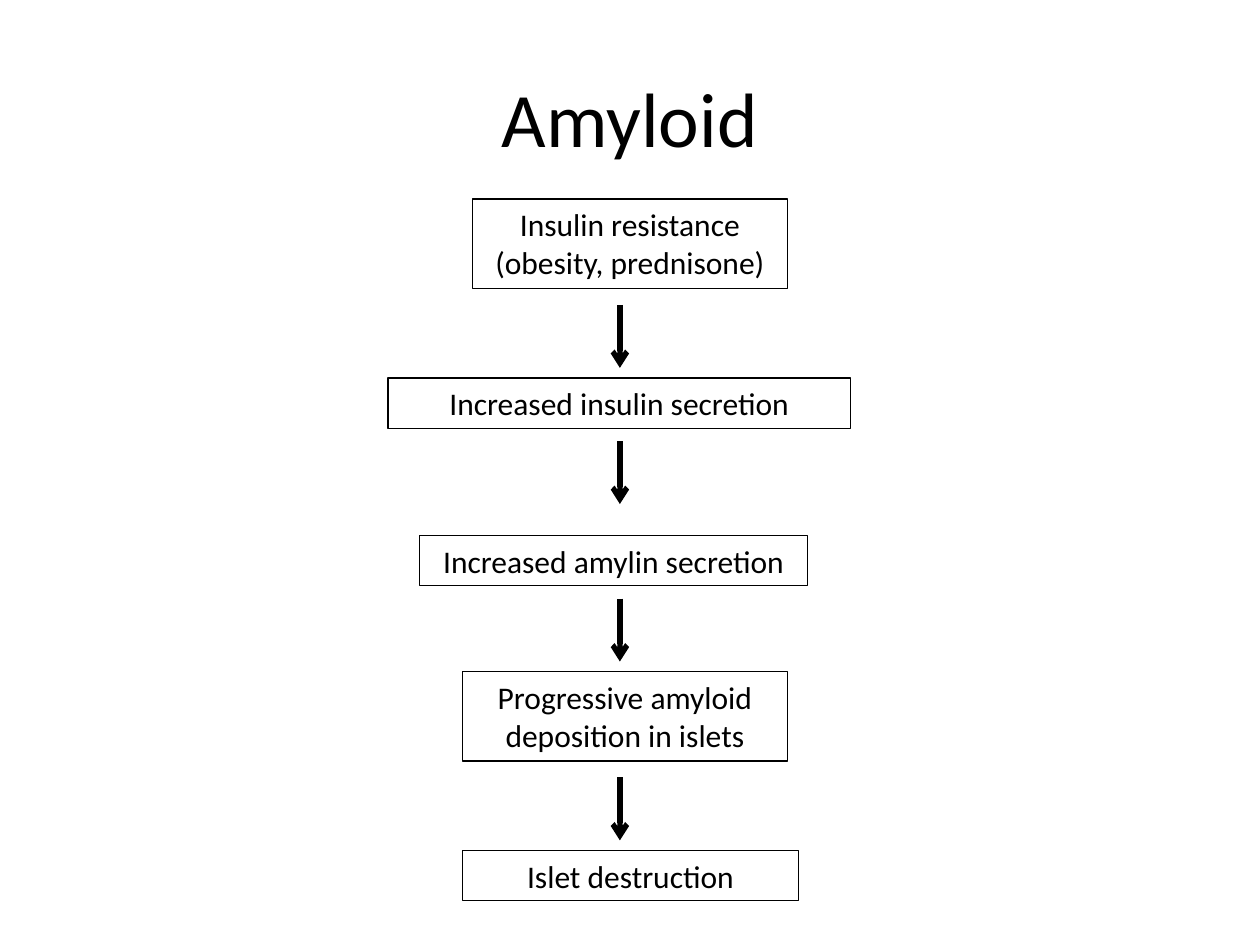
from dataclasses import dataclass

from lxml import etree
from pptx import Presentation
from pptx.dml.color import RGBColor
from pptx.enum.shapes import MSO_CONNECTOR, MSO_SHAPE
from pptx.enum.text import MSO_ANCHOR, MSO_AUTO_SIZE, PP_ALIGN
from pptx.oxml.ns import qn
from pptx.util import Inches, Pt

STRAIGHT = MSO_CONNECTOR.STRAIGHT
RECTANGLE = MSO_SHAPE.RECTANGLE
TOP = MSO_ANCHOR.TOP
MIDDLE = MSO_ANCHOR.MIDDLE
GROW = MSO_AUTO_SIZE.SHAPE_TO_FIT_TEXT
CENTER = PP_ALIGN.CENTER
TITLE_ONLY = 5


@dataclass(frozen=True)
class Theme:
    font: str = "Calibri"
    ink: RGBColor = RGBColor(0, 0, 0)
    paper: RGBColor = RGBColor(255, 255, 255)
    title_size: float = 44
    body_size: float = 18
    border: float = 0.75
    arrow: float = 3


THEME = Theme()
ONE_LINE = 0.4
TWO_LINES = 0.71
ARROW_X = 4.92
ARROW_LENGTH = 0.5

STEPS = [
    (3.75, 1.58, 2.5, TWO_LINES, ["Insulin resistance", "(obesity, prednisone)"]),
    (3.08, 3, 3.67, ONE_LINE, ["Increased insulin secretion"]),
    (3.33, 4.25, 3.08, ONE_LINE, ["Increased amylin secretion"]),
    (3.67, 5.33, 2.58, TWO_LINES, ["Progressive amyloid deposition in islets"]),
    (3.67, 6.75, 2.67, ONE_LINE, ["Islet destruction"]),
]
ARROW_TOPS = [2.42, 3.5, 4.75, 6.17]


def write_lines(frame, lines, size):
    frame.word_wrap = True
    for index, line in enumerate(lines):
        para = frame.paragraphs[0] if index == 0 else frame.add_paragraph()
        para.text = line
        para.alignment = CENTER
        para.font.name = THEME.font
        para.font.size = Pt(size)
        para.font.color.rgb = THEME.ink


def set_title(page, text):
    title = page.shapes.title
    title.left, title.top = Inches(0.5), Inches(0.3)
    title.width, title.height = Inches(9), Inches(1.25)
    title.text_frame.vertical_anchor = MIDDLE
    write_lines(title.text_frame, [text], THEME.title_size)


def add_step(page, left, top, width, height, lines):
    box = page.shapes.add_shape(
        RECTANGLE, Inches(left), Inches(top), Inches(width), Inches(height)
    )
    box.shadow.inherit = False
    box.fill.background()
    box.line.color.rgb = THEME.ink
    box.line.width = Pt(THEME.border)
    box.text_frame.vertical_anchor = TOP
    box.text_frame.auto_size = GROW
    write_lines(box.text_frame, lines, THEME.body_size)


def add_down_arrow(page, top):
    x = Inches(ARROW_X)
    arrow = page.shapes.add_connector(
        STRAIGHT, x, Inches(top), x, Inches(top + ARROW_LENGTH)
    )
    arrow.line.color.rgb = THEME.ink
    arrow.line.width = Pt(THEME.arrow)
    outline = arrow.line._get_or_add_ln()
    etree.SubElement(outline, qn("a:tailEnd"), type="arrow")
    etree.SubElement(arrow._element.spPr, qn("a:effectLst"))


def main():
    deck = Presentation()
    deck.slide_width, deck.slide_height = Inches(10), Inches(7.5)
    page = deck.slides.add_slide(deck.slide_layouts[TITLE_ONLY])
    page.background.fill.solid()
    page.background.fill.fore_color.rgb = THEME.paper
    set_title(page, "Amyloid")
    for step in STEPS:
        add_step(page, *step)
    for top in ARROW_TOPS:
        add_down_arrow(page, top)
    deck.save("out.pptx")


if __name__ == "__main__":
    main()
